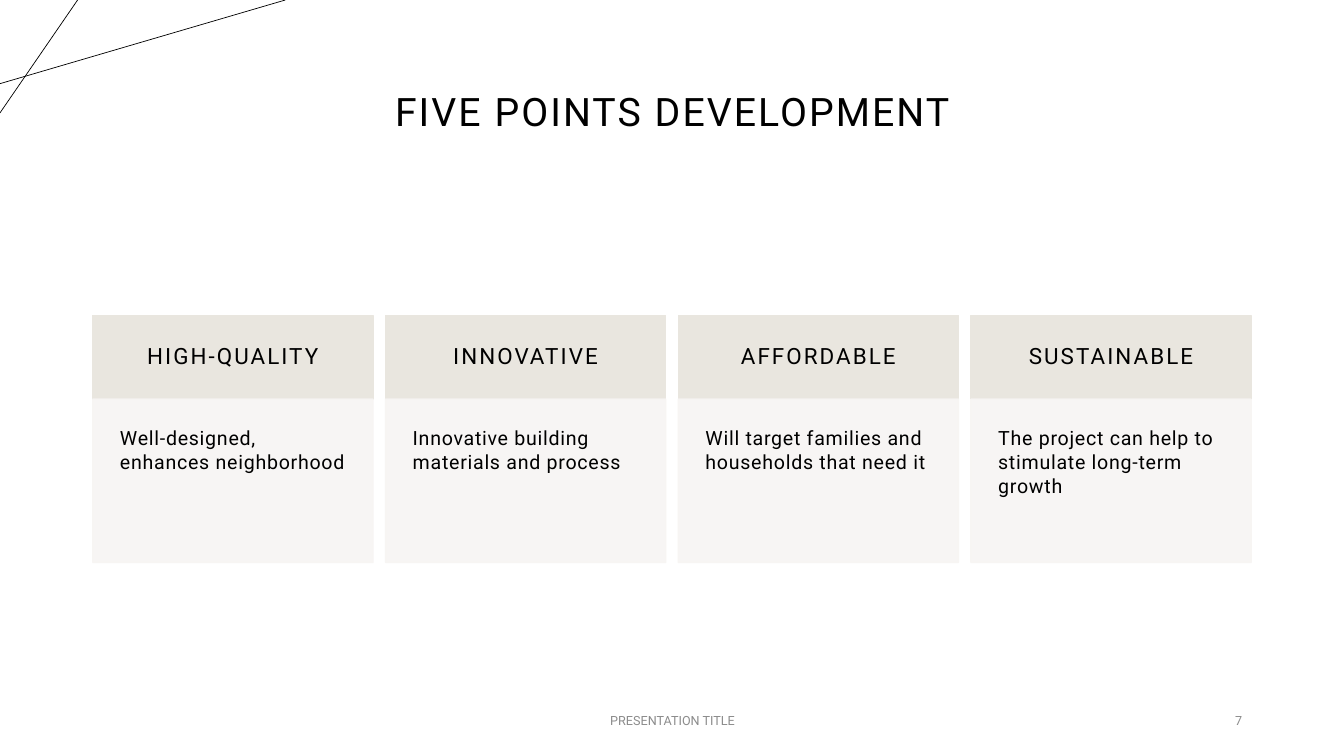
import lxml.etree
import pptx
import pptx.dml.color
import pptx.enum.shapes
import pptx.enum.text
import pptx.oxml.ns
import pptx.util

Inches = pptx.util.Inches
Pt = pptx.util.Pt
RGB = pptx.dml.color.RGBColor
ALIGN = pptx.enum.text.PP_ALIGN
ANCHOR = pptx.enum.text.MSO_ANCHOR
qn = pptx.oxml.ns.qn

COLORS = {"ink": "000000", "heading": "E9E6DF", "body": "F7F5F3", "footer": "8C8C8C"}


def write_text(holder, text, size, color="ink", align=ALIGN.LEFT, anchor=ANCHOR.MIDDLE,
               inset=None, tracking=0, line_spacing=1.0, space_after=0):
    frame = holder.text_frame
    frame.word_wrap = True
    frame.auto_size = pptx.enum.text.MSO_AUTO_SIZE.NONE
    frame.vertical_anchor = anchor
    if inset is not None:
        frame.margin_left = frame.margin_right = Inches(inset)
        frame.margin_top = frame.margin_bottom = Inches(inset)
    paragraph = frame.paragraphs[0]
    paragraph.alignment = align
    paragraph.line_spacing = line_spacing
    paragraph.space_before = Pt(0)
    paragraph.space_after = Pt(space_after)
    run = paragraph.add_run()
    run.text = text
    run.font.name = "Roboto"
    run.font.size = Pt(size)
    run.font.color.rgb = RGB.from_string(COLORS[color])
    if tracking:
        run._r.get_or_add_rPr().set("spc", str(int(tracking * 100)))


def add_panel(left, top, width, height, color, opacity=100):
    """Add a rectangle whose fill and outline share one colour and opacity."""
    panel = slide.shapes.add_shape(pptx.enum.shapes.MSO_SHAPE.RECTANGLE, Inches(left),
                                   Inches(top), Inches(width), Inches(height))
    panel.shadow.inherit = False
    panel.fill.solid()
    panel.fill.fore_color.rgb = RGB.from_string(COLORS[color])
    panel.line.color.rgb = RGB.from_string(COLORS[color])
    panel.line.width = Pt(1)
    if opacity < 100:
        for tint in panel._element.spPr.iter(qn("a:srgbClr")):
            lxml.etree.SubElement(tint, qn("a:alpha")).set("val", str(opacity * 1000))
    return panel


deck = pptx.Presentation()
deck.slide_width = Inches(13.33)
deck.slide_height = Inches(7.5)
slide = deck.slides.add_slide(deck.slide_layouts[5])

# Corner lines
for x1, y1, x2, y2 in [(0, 0.83, 2.83, 0), (0.77, 0, 0, 1.12)]:
    corner_line = slide.shapes.add_connector(
        pptx.enum.shapes.MSO_CONNECTOR.STRAIGHT, Inches(x1), Inches(y1), Inches(x2), Inches(y2))
    corner_line.line.color.rgb = RGB.from_string(COLORS["ink"])
    corner_line.line.width = Pt(0.5)
    lxml.etree.SubElement(corner_line._element.spPr, qn("a:effectLst"))

# Title
title = slide.shapes.title
title.left, title.top = Inches(0.92), Inches(0.4)
title.width, title.height = Inches(11.5), Inches(1.45)
write_text(title, "FIVE POINTS DEVELOPMENT", size=28, align=ALIGN.CENTER,
           tracking=1.5, line_spacing=0.9)

# Cards
points = [
    ("HIGH-QUALITY", "Well-designed, enhances neighborhood"),
    ("INNOVATIVE", "Innovative building materials and process"),
    ("AFFORDABLE", "Will target families and households that need it"),
    ("SUSTAINABLE", "The project can help to stimulate long-term growth"),
]
first_left, last_left = 0.92, 9.63
card_pitch = (last_left - first_left) / (len(points) - 1)
card_top, card_width = 3.13, 2.78
heading_height, body_height = 0.83, 1.62

for index, (heading, description) in enumerate(points):
    left = first_left + index * card_pitch
    heading_panel = add_panel(left, card_top, card_width, heading_height, "heading")
    write_text(heading_panel, heading, size=16, align=ALIGN.CENTER, inset=0.22,
               tracking=1.5, line_spacing=0.9, space_after=5.6)
    body_panel = add_panel(left, card_top + heading_height, card_width, body_height,
                           "body", opacity=90)
    write_text(body_panel, description, size=14, anchor=ANCHOR.TOP, inset=0.27,
               tracking=0.5, space_after=4.9)

# Footer
for text, left, width, align in [("PRESENTATION TITLE", 4.42, 4.5, ALIGN.CENTER),
                                 ("7", 9.42, 3, ALIGN.RIGHT)]:
    footer = slide.shapes.add_textbox(Inches(left), Inches(6.95), Inches(width), Inches(0.4))
    write_text(footer, text, size=9, color="footer", align=align)

deck.save("out.pptx")
